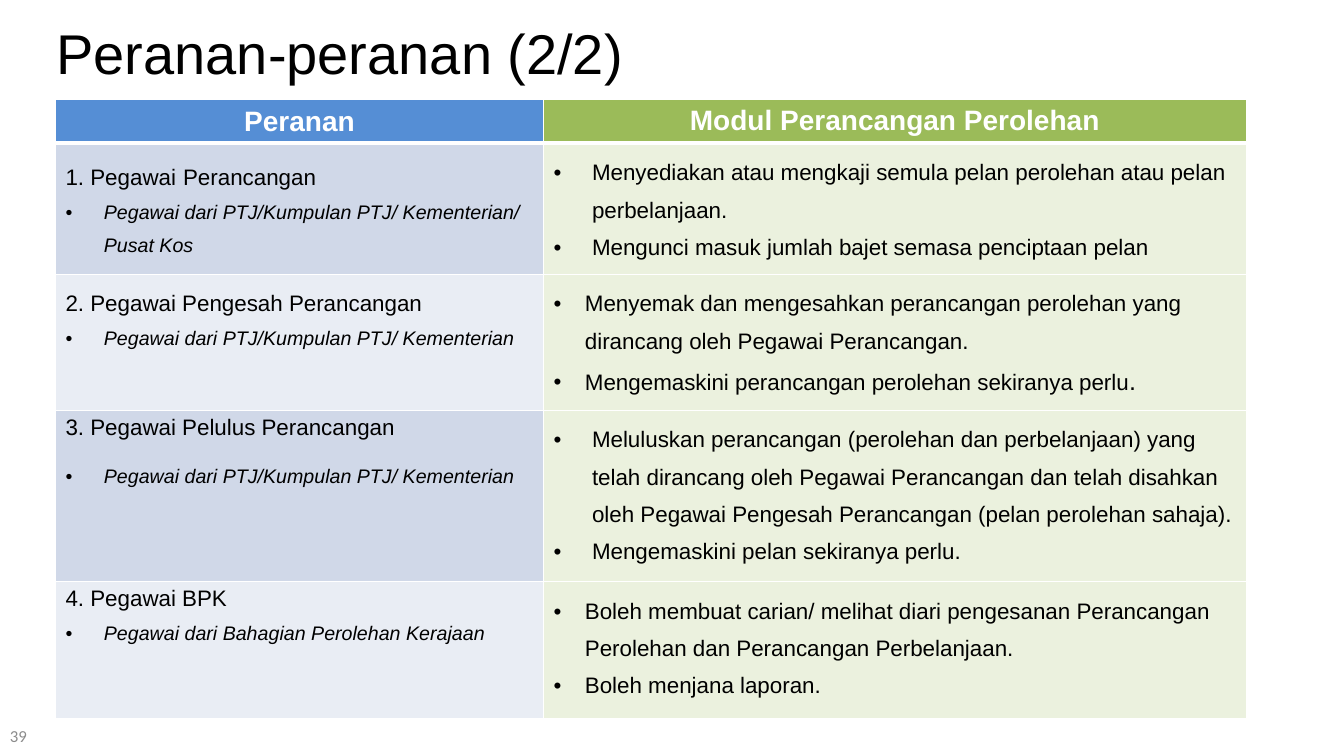
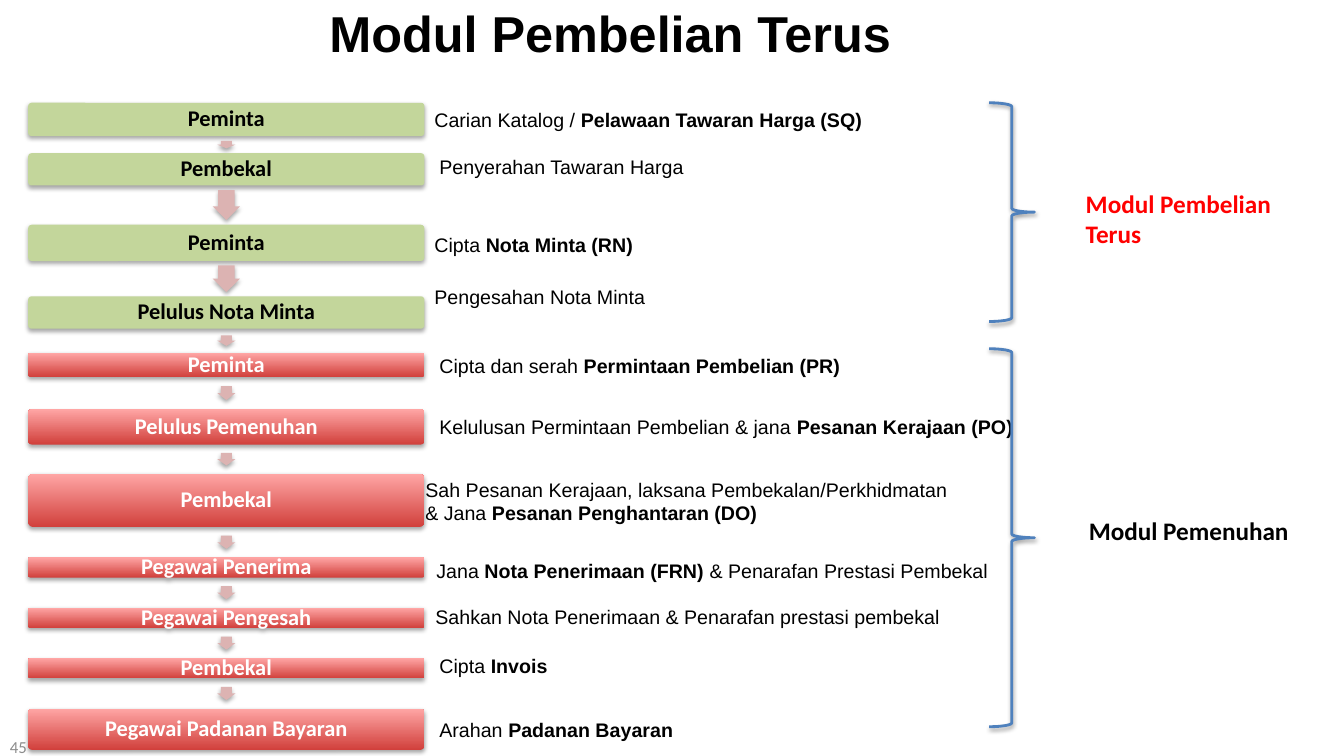
from lxml import etree
from pptx import Presentation
from pptx.dml.color import RGBColor
from pptx.enum.shapes import MSO_SHAPE
from pptx.enum.text import MSO_ANCHOR, MSO_AUTO_SIZE, PP_ALIGN
from pptx.oxml.ns import qn
from pptx.util import Inches, Pt

LEFT, CENTER = PP_ALIGN.LEFT, PP_ALIGN.CENTER
TOP, MIDDLE = MSO_ANCHOR.TOP, MSO_ANCHOR.MIDDLE
ROUNDED, ARROW, BRACE = MSO_SHAPE.ROUNDED_RECTANGLE, MSO_SHAPE.RIGHT_ARROW, MSO_SHAPE.RIGHT_BRACE

SLIDE_WIDTH, SLIDE_HEIGHT = 13.33, 7.5
TITLE_ONLY = 5
BODY_FONT, LABEL_FONT = "Arial", "Calibri"
INSETS = (0.1, 0.05, 0.1, 0.05)
COLORS = {
    "text": "000000", "white": "FFFFFF", "number": "8C8C8C", "accent": "FF0000",
    "blue": "558ED5", "green": "9BBB59", "blue_dark": "D0D8E8", "blue_light": "E9EDF4",
    "green_light": "EBF1DE", "step": "C3D69B", "step_low": "D1403C", "step_high": "FFA6A5",
    "arrow": "DCB3B2", "brace": "4F81BD",
}

# Each role: heading runs, note, note format, duties, indent of the duties
ROLES = [
    ([("1. Pegawai", {}), (" ", {"size": 18}), ("Perancangan", {})], {"line": 1.5},
     "Pegawai dari PTJ/Kumpulan PTJ/ Kementerian/ Pusat Kos", {"line": 1.5},
     ["Menyediakan atau mengkaji semula pelan perolehan atau pelan perbelanjaan.",
      "Mengunci masuk jumlah bajet semasa penciptaan pelan"], 0.38),
    ("2. Pegawai Pengesah Perancangan", {"line": 1.5},
     "Pegawai dari PTJ/Kumpulan PTJ/ Kementerian", {"line": 1.5},
     ["Menyemak dan mengesahkan perancangan perolehan yang dirancang oleh Pegawai Perancangan.",
      [("Mengemaskini perancangan perolehan sekiranya perlu", {}), (".", {"size": 18})]], 0.31),
    ("3. Pegawai Pelulus Perancangan", {},
     "Pegawai dari PTJ/Kumpulan PTJ/ Kementerian", {"before": 18},
     ["Meluluskan perancangan (perolehan dan perbelanjaan) yang telah dirancang oleh Pegawai "
      "Perancangan dan telah disahkan oleh Pegawai Pengesah Perancangan (pelan perolehan sahaja).",
      "Mengemaskini pelan sekiranya perlu."], 0.38),
    ("4. Pegawai BPK", {},
     "Pegawai dari Bahagian Perolehan Kerajaan", {"line": 1.5},
     ["Boleh membuat carian/ melihat diari pengesanan Perancangan Perolehan dan "
      "Perancangan Perbelanjaan.",
      "Boleh menjana laporan."], 0.31),
]
ROLE_ROWS = [0.43, 1.3, 1.35, 1.7, 1.36]
ROLE_COLUMNS = [0.41, 0.59]

# Each step: role, top in the flow, height, caption (bold between stars),
# caption offset from the step's top left corner, caption width
STEPS = [
    ("Peminta", 0, 0.33, "Carian Katalog / *Pelawaan Tawaran Harga (SQ)*", 3.93, 0, 5.13),
    ("Pembekal", 0.5, 0.32, "Penyerahan Tawaran Harga", 3.98, -0.03, 2.63),
    ("Peminta", 1.21, 0.36, "Cipta *Nota Minta (RN)*", 3.93, 0.03, 2.18),
    ("Pelulus Nota Minta", 1.92, 0.32, "Pengesahan Nota Minta", 3.93, -0.16, 2.3),
    ("Peminta", 2.48, 0.24, "Cipta dan serah *Permintaan Pembelian (PR)*", 3.98, -0.04, 4.68),
    ("Pelulus Pemenuhan", 3.04, 0.35,
     "Kelulusan Permintaan Pembelian & jana *Pesanan Kerajaan (PO)*", 3.98, 0.01, 7.93),
    ("Pembekal", 3.68, 0.53, "Sah Pesanan Kerajaan, laksana Pembekalan/Perkhidmatan "
     "& Jana *Pesanan Penghantaran (DO)*", 3.84, -0.01, 5.47),
    ("Pegawai Penerima", 4.51, 0.2,
     "Jana *Nota Penerimaan (FRN) *& Penarafan Prestasi Pembekal", 3.95, -0.03, 8.47),
    ("Pegawai Pengesah", 5.01, 0.2,
     "Sahkan Nota Penerimaan & Penarafan prestasi pembekal", 3.94, -0.08, 7.44),
    ("Pembekal", 5.51, 0.2, "Cipta *Invois*", 3.98, -0.09, 1.28),
    ("Pegawai Padanan Bayaran", 6.01, 0.41, "Arahan *Padanan Bayaran*", 3.98, 0.04, 2.53),
]
GREEN_STEPS = 4
STEP_WIDTH = 3.93


def rgb(name):
    return RGBColor.from_string(COLORS[name])


def inches(box):
    return [Inches(value) for value in box]


def add_bullet(paragraph, indent):
    properties = paragraph._p.get_or_add_pPr()
    properties.set("marL", str(Inches(indent)))
    properties.set("indent", str(-Inches(indent)))
    etree.SubElement(properties, qn("a:buFont"), typeface=BODY_FONT)
    etree.SubElement(properties, qn("a:buChar"), char="•")


def write(paragraph, text, size=16, color="text", font=BODY_FONT, bold=False, italic=False,
          align=LEFT, line=None, before=None, bullet=None):
    """Fill a paragraph with a string or with (text, format) runs."""
    if bullet:
        add_bullet(paragraph, bullet)
    paragraph.alignment = align
    if line:
        paragraph.line_spacing = line
    if before:
        paragraph.space_before = Pt(before)
    runs = [(text, {})] if isinstance(text, str) else text
    for words, changes in runs:
        run = paragraph.add_run()
        run.text = words
        run.font.name = font
        run.font.size = Pt(changes.get("size", size))
        run.font.bold = changes.get("bold", bold)
        run.font.italic = italic
        run.font.color.rgb = rgb(color)


def bold_runs(text):
    return [(part, {"bold": index % 2 == 1})
            for index, part in enumerate(text.split("*")) if part]


def set_frame(frame, anchor=TOP, insets=INSETS, wrap=True):
    frame.auto_size = MSO_AUTO_SIZE.NONE
    frame.word_wrap = wrap
    frame.vertical_anchor = anchor
    frame.margin_left, frame.margin_top, frame.margin_right, frame.margin_bottom = inches(insets)


def add_text(slide, box, text, anchor=TOP, wrap=True, **style):
    frame = slide.shapes.add_textbox(*inches(box)).text_frame
    set_frame(frame, anchor, wrap=wrap)
    write(frame.paragraphs[0], text, **style)


def add_shadow(shape, opacity, distance):
    effects = etree.SubElement(shape._element.spPr, qn("a:effectLst"))
    shadow = etree.SubElement(effects, qn("a:outerShdw"), blurRad=str(Pt(3.1)),
                              dist=str(Pt(distance)), dir="5400000", rotWithShape="0")
    color = etree.SubElement(shadow, qn("a:srgbClr"), val=COLORS["text"])
    etree.SubElement(color, qn("a:alpha"), val=str(opacity * 1000))


def start_slide(presentation, title, title_box, number, number_top, insets=INSETS, **style):
    """Title and page number, shared by all slides."""
    slide = presentation.slides.add_slide(presentation.slide_layouts[TITLE_ONLY])
    shape = slide.shapes.title
    shape.left, shape.top, shape.width, shape.height = inches(title_box)
    set_frame(shape.text_frame, insets=insets)
    write(shape.text_frame.paragraphs[0], title, **style)
    add_text(slide, (0, number_top, 3.11, 0.4), number, anchor=MIDDLE,
             size=12, font=LABEL_FONT, color="number")
    return slide


# Table of roles
def format_cell(cell, fill, bottom=1):
    properties = cell._tc.get_or_add_tcPr()
    for side, width in (("L", 1), ("R", 1), ("T", 1), ("B", bottom)):
        border = etree.SubElement(properties, qn("a:ln" + side), w=str(Pt(width)))
        paint = etree.SubElement(border, qn("a:solidFill"))
        etree.SubElement(paint, qn("a:srgbClr"), val=COLORS["white"])
    cell.fill.solid()
    cell.fill.fore_color.rgb = rgb(fill)


def draw_role_table(slide, box):
    table = slide.shapes.add_table(len(ROLE_ROWS), len(ROLE_COLUMNS), *inches(box)).table
    table.horz_banding = False
    for column, share in zip(table.columns, ROLE_COLUMNS):
        column.width = Inches(box[2] * share)
    for row, height in zip(table.rows, ROLE_ROWS):
        row.height = Inches(height)

    headers = [("Peranan", "blue", MIDDLE), ("Modul Perancangan Perolehan", "green", TOP)]
    for index, (text, fill, anchor) in enumerate(headers):
        cell = table.cell(0, index)
        format_cell(cell, fill, bottom=3)
        cell.vertical_anchor = anchor
        write(cell.text_frame.paragraphs[0], text, size=20, color="white", bold=True, align=CENTER)

    for row, (heading, heading_style, note, note_style, duties, indent) in enumerate(ROLES, 1):
        role_cell, duty_cell = table.cell(row, 0), table.cell(row, 1)
        format_cell(role_cell, "blue_dark" if row % 2 else "blue_light")
        format_cell(duty_cell, "green_light")
        frame = role_cell.text_frame
        write(frame.paragraphs[0], heading, **heading_style)
        write(frame.add_paragraph(), note, size=14, italic=True, bullet=0.38, **note_style)
        frame = duty_cell.text_frame
        for index, duty in enumerate(duties):
            paragraph = frame.add_paragraph() if index else frame.paragraphs[0]
            write(paragraph, duty, line=1.5, bullet=indent)


# Flow of steps
def draw_step(slide, box, role, green):
    shape = slide.shapes.add_shape(ROUNDED, *inches(box))
    shape.adjustments[0] = 0.1
    if green:
        shape.fill.solid()
        shape.fill.fore_color.rgb = rgb("step")
    else:
        shape.fill.gradient()
        shape.fill.gradient_angle = 90
        for stop, name in zip(shape.fill.gradient_stops, ("step_low", "step_high")):
            stop.color.rgb = rgb(name)
    shape.line.fill.background()
    add_shadow(shape, 35, 1.8)
    set_frame(shape.text_frame, MIDDLE, (0.07,) * 4)
    write(shape.text_frame.paragraphs[0], role, font=LABEL_FONT, bold=True, align=CENTER,
          line=0.9, color="text" if green else "white")


def draw_arrow(slide, center_x, top, bottom):
    gap = bottom - top
    wide = gap > 0.34
    length, breadth = (gap * 0.76, 0.27) if wide else (gap * 0.43, 0.18)
    center_y = (top + bottom) / 2
    shape = slide.shapes.add_shape(ARROW, *inches(
        (center_x - length / 2, center_y - breadth / 2, length, breadth)))
    shape.rotation = 90
    shape.adjustments[0], shape.adjustments[1] = 0.6, 0.5
    shape.fill.solid()
    shape.fill.fore_color.rgb = rgb("arrow")
    shape.line.fill.background()
    add_shadow(shape, 35, 1.8)


def draw_flow(slide, left, top):
    previous_bottom = None
    for index, (role, offset, height, caption, shift_x, shift_y, width) in enumerate(STEPS):
        step_top = top + offset
        if previous_bottom is not None:
            draw_arrow(slide, left + STEP_WIDTH / 2, previous_bottom, step_top)
        draw_step(slide, (left, step_top, STEP_WIDTH, height), role, index < GREEN_STEPS)
        add_text(slide, (left + shift_x, step_top + shift_y, width, 0.34),
                 bold_runs(caption), size=14, wrap=width > 3)
        previous_bottom = step_top + height


# Brace with the name of the module
def draw_module(slide, box, name, label_offset, label_size, color):
    left, top = box[:2]
    shape = slide.shapes.add_shape(BRACE, *inches(box))
    shape.fill.background()
    shape.line.color.rgb = rgb("brace")
    shape.line.width = Pt(2)
    add_shadow(shape, 38, 1.6)
    add_text(slide, (left + label_offset[0], top + label_offset[1], *label_size), name,
             size=18, font=LABEL_FONT, bold=True, color=color)


def main():
    presentation = Presentation()
    presentation.slide_width = Inches(SLIDE_WIDTH)
    presentation.slide_height = Inches(SLIDE_HEIGHT)

    slide = start_slide(presentation, "Peranan-peranan (2/2)", (0.46, 0.13, 12.53, 0.77),
                        "39", 7.1, size=40)
    draw_role_table(slide, (0.55, 0.99, 11.81, sum(ROLE_ROWS)))

    slide = start_slide(presentation, "Modul Pembelian Terus", (0, 0, 12.11, 0.68),
                        "45", 7.21, insets=(0.1, 0.02, 0.1, 0.05),
                        size=36, bold=True, align=CENTER)
    draw_flow(slide, 0.28, 1.02)
    draw_module(slide, (9.81, 1.02, 0.45, 2.17), "Modul Pembelian Terus",
                (0.86, 0.8), (2.25, 0.71), "accent")
    draw_module(slide, (9.81, 3.46, 0.45, 3.75), "Modul Pemenuhan",
                (0.89, 1.6), (2.45, 0.4), "text")

    presentation.save("out.pptx")


if __name__ == "__main__":
    main()
